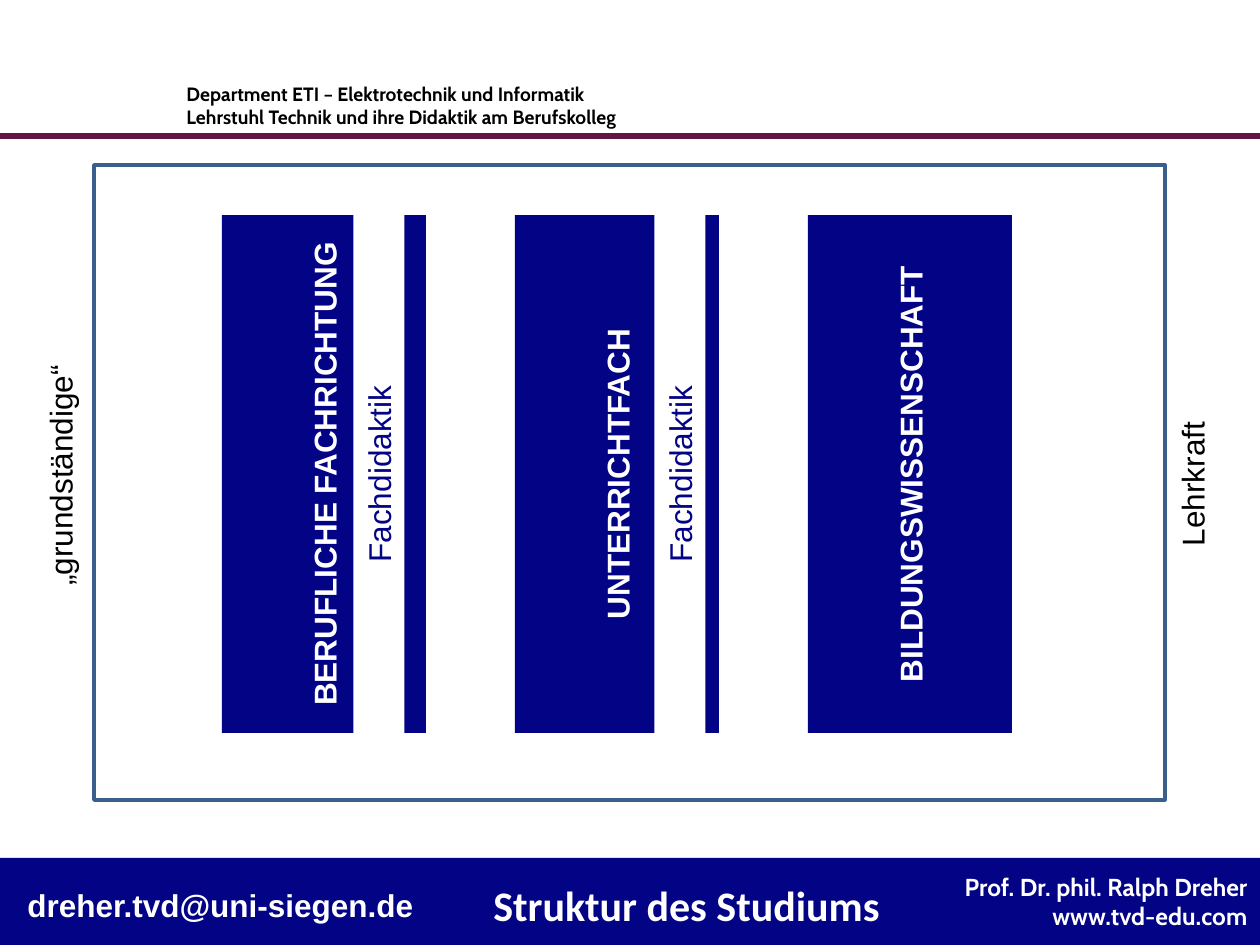
"""Build the slide on the structure of the teaching degree."""
from lxml import etree
from pptx import Presentation
from pptx import util as u
from pptx.dml.color import RGBColor
from pptx.enum import shapes, text
from pptx.oxml.ns import qn

PX = 914400 / 126
WIDTH, HEIGHT = 1260, 945
COLOURS = {"navy": "030385", "plum": "611543", "steel": "3A5F8C",
           "white": "FFFFFF", "black": "000000"}
LEFT, CENTRE, RIGHT = text.PP_ALIGN.LEFT, text.PP_ALIGN.CENTER, text.PP_ALIGN.RIGHT
TOP, MIDDLE = text.MSO_ANCHOR.TOP, text.MSO_ANCHOR.MIDDLE

FOOTER = ["Prof. Dr. phil. Ralph Dreher", "www.tvd-edu.com"]
DEPARTMENT = ["Department ETI – Elektrotechnik und Informatik",
              "Lehrstuhl Technik und ihre Didaktik am Berufskolleg"]
TITLE = "Struktur des Studiums"
EMAIL = "dreher.tvd@uni-siegen.de"
PILLARS = ["BERUFLICHE FACHRICHTUNG", "UNTERRICHTFACH", "BILDUNGSWISSENSCHAFT"]
STRIPE = "Fachdidaktik"
STRIPE_CENTRES = [379, 680]
SIDES = [("„grundständige“", 60, 474, 248), ("Lehrkraft", 1192, 483, 151)]

PILLAR_X, PILLAR_Y, PILLAR_STEP = 324, 474, 293
PILLAR_LENGTH, PILLAR_WIDTH, STRIPE_WIDTH = 518, 204, 51

BODY = {"size": u.Pt(18), "name": "Arial", "bold": False}
STRONG = {**BODY, "bold": True}
CABIN = {"name": "Cabin", "bold": True}


def emu(*lengths):
    return [u.Emu(round(length * PX)) for length in lengths]


def rgb(colour):
    return RGBColor.from_string(COLOURS[colour])


def write(shape, lines, font, colour, align=LEFT, anchor=TOP, wrap=True):
    frame = shape.text_frame
    frame.word_wrap, frame.vertical_anchor = wrap, anchor
    for index, line in enumerate(lines):
        para = frame.add_paragraph() if index else frame.paragraphs[0]
        para.alignment = align
        span = para.add_run()
        span.text = line
        for key, value in font.items():
            setattr(span.font, key, value)
        span.font.color.rgb = rgb(colour)


def add_rect(page, area, fill=None, line=None):
    shape = page.shapes.add_shape(shapes.MSO_SHAPE.RECTANGLE, *emu(*area))
    shape.shadow.inherit = False
    if fill:
        shape.fill.solid()
        shape.fill.fore_color.rgb = rgb(fill)
    else:
        shape.fill.background()
    if line:
        shape.line.color.rgb = rgb(line)
        shape.line.width = u.Pt(2)
    else:
        shape.line.fill.background()
    return shape


def add_text(page, area, *words, **options):
    box = page.shapes.add_textbox(*emu(*area))
    write(box, *words, **options)
    return box


def upright(x, y, length, width):
    return x - length / 2, y - width / 2, length, width


def main():
    deck = Presentation()
    deck.slide_width, deck.slide_height = emu(WIDTH, HEIGHT)
    page = deck.slides.add_slide(deck.slide_layouts[6])

    footer = add_rect(page, (0, 858, WIDTH, 87), "navy")
    write(footer, FOOTER, {**CABIN, "size": u.Pt(14)}, "white", RIGHT, MIDDLE)
    rule = page.shapes.add_connector(shapes.MSO_CONNECTOR.STRAIGHT, *emu(0, 136, WIDTH, 136))
    rule.line.color.rgb = rgb("plum")
    rule.line.width = u.Pt(3)
    etree.SubElement(rule._element.spPr, qn("a:effectLst"))

    add_text(page, (174, 76, 714, 59), DEPARTMENT, {**CABIN, "size": u.Pt(11)}, "black")
    add_text(page, (481, 873, 416, 63), [TITLE],
             {"size": u.Pt(24), "name": "Calibri", "bold": True}, "white", wrap=False)
    add_text(page, (15, 880, 415, 50), [EMAIL], STRONG, "white", wrap=False)

    for index, label in enumerate(PILLARS):
        centre = PILLAR_X + index * PILLAR_STEP
        pillar = add_rect(page, upright(centre, PILLAR_Y, PILLAR_LENGTH, PILLAR_WIDTH), "navy")
        pillar.rotation = 270
        write(pillar, [label], STRONG, "white", CENTRE, MIDDLE)

    add_rect(page, (94, 165, 1071, 635), line="steel")

    for label, x, y, length in SIDES:
        side = add_text(page, upright(x, y, length, 50), [label], BODY, "black", wrap=False)
        side.rotation = 270

    for centre in STRIPE_CENTRES:
        stripe = add_rect(page, upright(centre, PILLAR_Y, PILLAR_LENGTH, STRIPE_WIDTH), "white")
        stripe.rotation = 270
        write(stripe, [STRIPE], BODY, "navy", CENTRE)

    deck.save("out.pptx")


if __name__ == "__main__":
    main()
